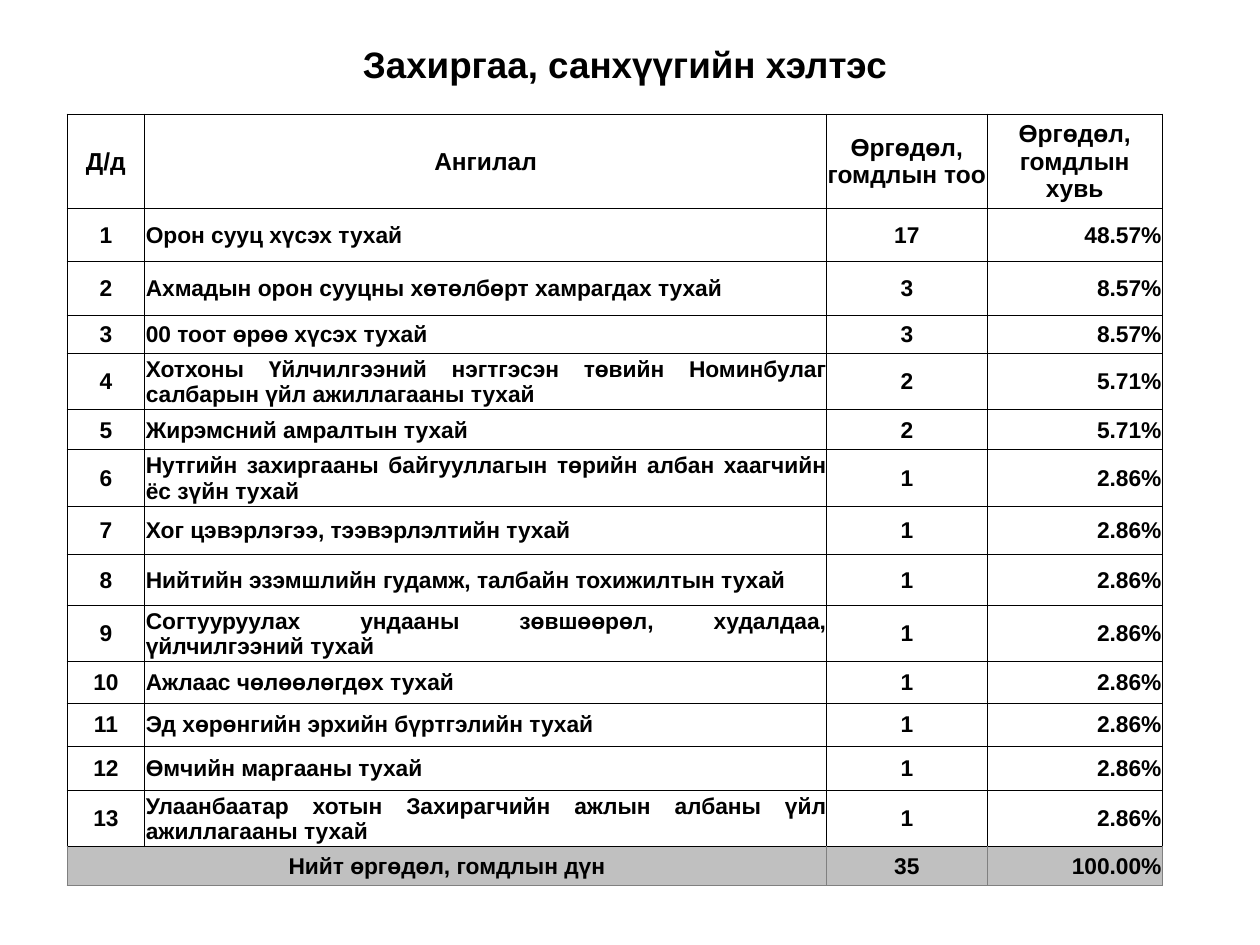
from dataclasses import dataclass

from lxml import etree
from pptx import Presentation
from pptx import util as u
from pptx.dml.color import RGBColor
from pptx.enum import text
from pptx.oxml import ns

LEFT, CENTER, RIGHT, JUSTIFY = (
    text.PP_ALIGN.LEFT, text.PP_ALIGN.CENTER, text.PP_ALIGN.RIGHT, text.PP_ALIGN.JUSTIFY)

HEADER = ("Д/д", "Ангилал", "Өргөдөл, гомдлын тоо", "Өргөдөл, гомдлын хувь")
REQUESTS = [
    ("Орон сууц хүсэх тухай", 17),
    ("Ахмадын орон сууцны хөтөлбөрт хамрагдах тухай", 3),
    ("00 тоот өрөө хүсэх тухай", 3),
    ("Хотхоны Үйлчилгээний нэгтгэсэн төвийн Номинбулаг салбарын үйл ажиллагааны тухай", 2),
    ("Жирэмсний амралтын тухай", 2),
    ("Нутгийн захиргааны байгууллагын төрийн албан хаагчийн ёс зүйн тухай", 1),
    ("Хог цэвэрлэгээ, тээвэрлэлтийн тухай", 1),
    ("Нийтийн эзэмшлийн гудамж, талбайн тохижилтын тухай", 1),
    ("Согтууруулах ундааны зөвшөөрөл, худалдаа, үйлчилгээний тухай", 1),
    ("Ажлаас чөлөөлөгдөх тухай", 1),
    ("Эд хөрөнгийн эрхийн бүртгэлийн тухай", 1),
    ("Өмчийн маргааны тухай", 1),
    ("Улаанбаатар хотын Захирагчийн ажлын албаны үйл ажиллагааны тухай", 1),
]
COLUMNS = (1.57, 13.74, 3.24, 3.53)
ROWS = (1.9, 1.07, 1.09, 0.76, 1.14, 0.81, 1.14, 0.97, 1.02, 1.14, 0.84, 0.86, 0.89, 1.14, 0.79)


@dataclass(frozen=True)
class Theme:
    font: str = "Arial"
    ink: str = "000000"
    paper: str = "FFFFFF"
    total_fill: str = "C0C0C0"
    total_line: str = "808080"
    title_size: float = 21
    header_size: float = 14
    body_size: float = 13
    line_width: float = 0.5


class Deck:
    """Build slides in one theme."""

    def __init__(self, prs, theme):
        self.prs = prs
        self.theme = theme
        self.slide = prs.slides.add_slide(prs.slide_layouts[5])

    def style(self, p, size, align):
        p.alignment = align
        p.font.name = self.theme.font
        p.font.size = u.Pt(size)
        p.font.bold = True
        p.font.color.rgb = RGBColor.from_string(self.theme.ink)

    def title(self, words, left, top, width, height):
        sp = self.slide.shapes.title
        sp.left, sp.top, sp.width, sp.height = map(u.Cm, (left, top, width, height))
        tf = sp.text_frame
        tf.text = words
        tf.word_wrap = True
        tf.auto_size = text.MSO_AUTO_SIZE.NONE
        tf.vertical_anchor = text.MSO_ANCHOR.TOP
        tf.margin_left = u.Cm(0.45)
        self.style(tf.paragraphs[0], self.theme.title_size, CENTER)

    def borders(self, cell, colors):
        tc_pr = cell._tc.get_or_add_tcPr()
        for i, (side, color) in enumerate(zip("LRTB", colors)):
            ln = etree.Element(ns.qn(f"a:ln{side}"), w=str(u.Pt(self.theme.line_width)))
            fill = etree.SubElement(ln, ns.qn("a:solidFill"))
            etree.SubElement(fill, ns.qn("a:srgbClr"), val=color)
            tc_pr.insert(i, ln)

    def cell(self, cell, words, size, align, fill, lines):
        cell.text = words
        cell.vertical_anchor = text.MSO_ANCHOR.MIDDLE
        cell.margin_left = cell.margin_right = cell.margin_top = u.Cm(0.02)
        cell.margin_bottom = 0
        cell.fill.solid()
        cell.fill.fore_color.rgb = RGBColor.from_string(fill)
        self.borders(cell, lines)
        self.style(cell.text_frame.paragraphs[0], size, align)

    def table(self, rows, left, top, widths, heights):
        t = self.theme
        frame = self.slide.shapes.add_table(
            len(rows), len(widths), *map(u.Cm, (left, top, sum(widths), sum(heights))))
        table = frame.table
        table.horz_banding = table.first_row = False
        for column, width in zip(table.columns, widths):
            column.width = u.Cm(width)
        for row, height in zip(table.rows, heights):
            row.height = u.Cm(height)
        last = len(rows) - 1
        for i, values in enumerate(rows):
            size = t.body_size if i else t.header_size
            aligns = (CENTER, JUSTIFY, CENTER, RIGHT) if i else (CENTER,) * 4
            fill, lines = t.paper, (t.ink,) * 4
            if i == last:
                fill, lines = t.total_fill, (t.total_line, t.total_line, t.ink, t.total_line)
            for j, (words, align) in enumerate(zip(values, aligns)):
                self.cell(table.cell(i, j), words, size, align, fill, lines)
        table.cell(last, 0).merge(table.cell(last, 1))


def main():
    prs = Presentation()
    prs.slide_width, prs.slide_height = u.Cm(25.4), u.Cm(19.05)
    deck = Deck(prs, Theme())
    deck.title("Захиргаа, санхүүгийн хэлтэс", 1.35, 0.71, 22.3, 2.06)
    total = sum(count for _, count in REQUESTS)
    body = [(str(i), name, str(count), f"{count / total:.2%}")
            for i, (name, count) in enumerate(REQUESTS, 1)]
    footer = ("Нийт өргөдөл, гомдлын дүн", "", str(total), f"{1:.2%}")
    deck.table([HEADER, *body, footer], 1.35, 2.3, COLUMNS, ROWS)
    prs.save("out.pptx")


if __name__ == "__main__":
    main()
